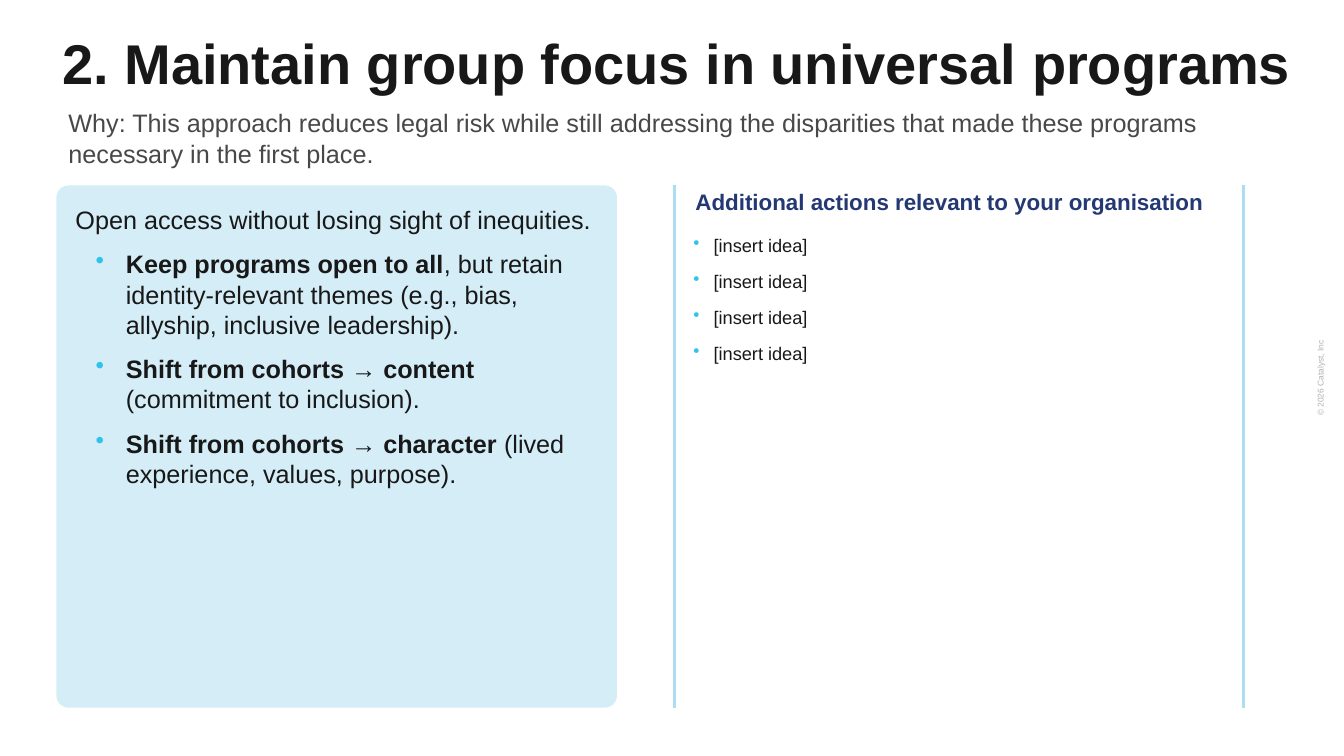
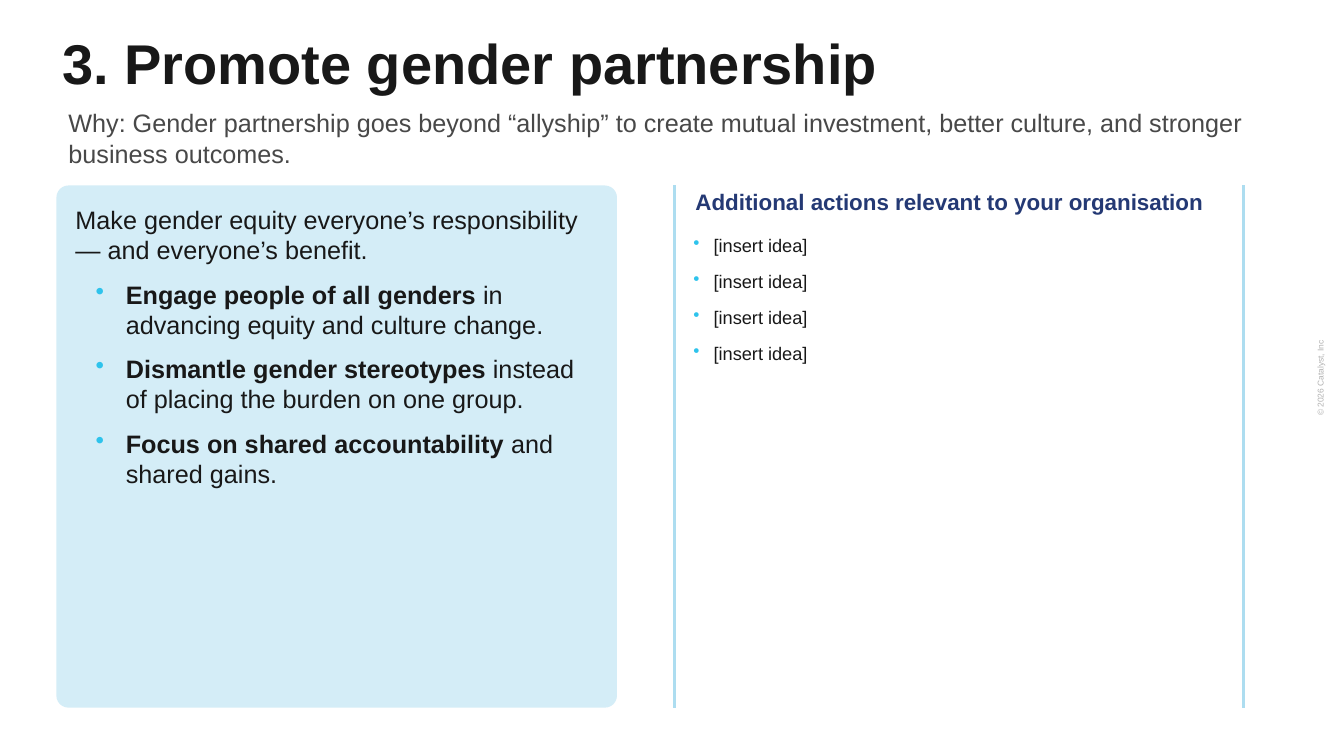
from lxml import etree
from pptx import Presentation
from pptx.dml.color import RGBColor
from pptx.enum.shapes import MSO_CONNECTOR, MSO_SHAPE
from pptx.enum.text import MSO_ANCHOR, PP_ALIGN
from pptx.oxml.ns import qn
from pptx.util import Inches, Pt

LINE, ROUND = MSO_CONNECTOR.STRAIGHT, MSO_SHAPE.ROUNDED_RECTANGLE
TOP, MIDDLE = MSO_ANCHOR.TOP, MSO_ANCHOR.MIDDLE
LEFT, CENTER = PP_ALIGN.LEFT, PP_ALIGN.CENTER

INK = RGBColor(0x18, 0x18, 0x18)
GRAY = RGBColor(0x48, 0x48, 0x48)
PALE = RGBColor(0xB2, 0xB2, 0xB2)
NAVY = RGBColor(0x24, 0x39, 0x74)
CYAN = RGBColor(0x2E, 0xC3, 0xEC)
SKY = RGBColor(0xD4, 0xED, 0xF7)
RULE = RGBColor(0xAD, 0xDD, 0xF0)

FONT = "Arial"
FOOTER = "© 2026 Catalyst, Inc"
HEADING = "Additional actions relevant to your organisation"
IDEAS = ["[insert idea]"] * 4

SLIDES = [
    {
        "title": "2. Maintain group focus in universal programs",
        "why": "Why: This approach reduces legal risk while still addressing "
               "the disparities that made these programs necessary in the first place.",
        "lead": "Open access without losing sight of inequities.",
        "points": [
            ("Keep programs open to all",
             ", but retain identity-relevant themes (e.g., bias, allyship, inclusive leadership)."),
            ("Shift from cohorts → content ", "(commitment to inclusion)."),
            ("Shift from cohorts → character ", "(lived experience, values, purpose)."),
        ],
    },
    {
        "title": "3. Promote gender partnership",
        "why": "Why: Gender partnership goes beyond “allyship” to create mutual "
               "investment, better culture, and stronger business outcomes.",
        "lead": "Make gender equity everyone’s responsibility — and everyone’s benefit.",
        "points": [
            ("Engage people of all genders ", "in advancing equity and culture change."),
            ("Dismantle gender stereotypes ", "instead of placing the burden on one group."),
            ("Focus on shared accountability ", "and shared gains."),
        ],
    },
]

BAND_TOP, BAND_END = 1.84, 7.02
PANEL = (0.56, BAND_TOP, 5.56, BAND_END - BAND_TOP)
RULES = (6.69, 12.33)

STYLES = {
    "footer": {"at": (11.53, 3.65, 3.13, 0.2), "size": 6, "color": PALE,
               "align": CENTER, "anchor": MIDDLE, "turn": 270},
    "title": {"at": (0.52, 0.31, 12.68, 0.79), "size": 40, "color": INK,
              "bold": True, "spacing": 0.9},
    "why": {"at": (0.58, 1.02, 12.01, 0.71), "size": 18, "color": GRAY},
    "body": {"at": (0.65, 1.98, 5.41, 4.92), "size": 18, "color": INK,
             "indent": (0.5, 0.3)},
    "ideas": {"at": (6.78, 2.28, 5.4, 4.45), "size": 13, "color": INK,
              "indent": (0.2, 0.2)},
    "heading": {"at": (6.8, 1.85, 5.36, 0.43), "size": 16, "color": NAVY,
                "bold": True, "spacing": 0.9},
}


def add_bullet(para, margin, hang):
    props = para._p.get_or_add_pPr()
    props.set("marL", str(Inches(margin)))
    props.set("indent", str(-Inches(hang)))
    tint = etree.SubElement(props, qn("a:buClr"))
    etree.SubElement(tint, qn("a:srgbClr")).set("val", str(CYAN))
    etree.SubElement(props, qn("a:buChar")).set("char", "•")


def add_text(slide, kind, items):
    style = STYLES[kind]
    box = slide.shapes.add_textbox(*map(Inches, style["at"]))
    box.rotation = style.get("turn", 0)
    frame = box.text_frame
    frame.word_wrap = True
    frame.vertical_anchor = style.get("anchor", TOP)
    for i, (mark, runs) in enumerate(items):
        para = frame.add_paragraph() if i else frame.paragraphs[0]
        if mark:
            add_bullet(para, *style["indent"])
        para.alignment = style.get("align", LEFT)
        if "spacing" in style:
            para.line_spacing = style["spacing"]
        if i:
            para.space_before = Pt(10)
        for words, bold in runs:
            run = para.add_run()
            run.text = words
            looks = {"name": FONT, "size": Pt(style["size"]), "bold": bold}
            for key, value in looks.items():
                setattr(run.font, key, value)
            run.font.color.rgb = style["color"]


def add_line(slide, kind, words):
    add_text(slide, kind, [(False, [(words, STYLES[kind].get("bold", False))])])


def add_panel(slide):
    panel = slide.shapes.add_shape(ROUND, *map(Inches, PANEL))
    panel.adjustments[0] = 0.023
    panel.shadow.inherit = False
    panel.fill.solid()
    panel.fill.fore_color.rgb = SKY
    panel.line.fill.background()


def add_rule(slide, x):
    ends = map(Inches, (x, BAND_TOP, x, BAND_END))
    rule = slide.shapes.add_connector(LINE, *ends)
    rule.line.color.rgb = RULE
    rule.line.width = Pt(2)
    etree.SubElement(rule._element.spPr, qn("a:effectLst"))


def build_slide(deck, data):
    slide = deck.slides.add_slide(deck.slide_layouts[6])
    add_line(slide, "footer", FOOTER)
    add_panel(slide)
    add_line(slide, "title", data["title"])
    points = [(True, [(lead, True), (rest, False)]) for lead, rest in data["points"]]
    add_text(slide, "body", [(False, [(data["lead"], False)])] + points)
    add_text(slide, "ideas", [(True, [(idea, False)]) for idea in IDEAS])
    add_line(slide, "heading", HEADING)
    add_line(slide, "why", data["why"])
    for x in RULES:
        add_rule(slide, x)


def main():
    deck = Presentation()
    deck.slide_width, deck.slide_height = Inches(13.33), Inches(7.5)
    for data in SLIDES:
        build_slide(deck, data)
    deck.save("out.pptx")


if __name__ == "__main__":
    main()
